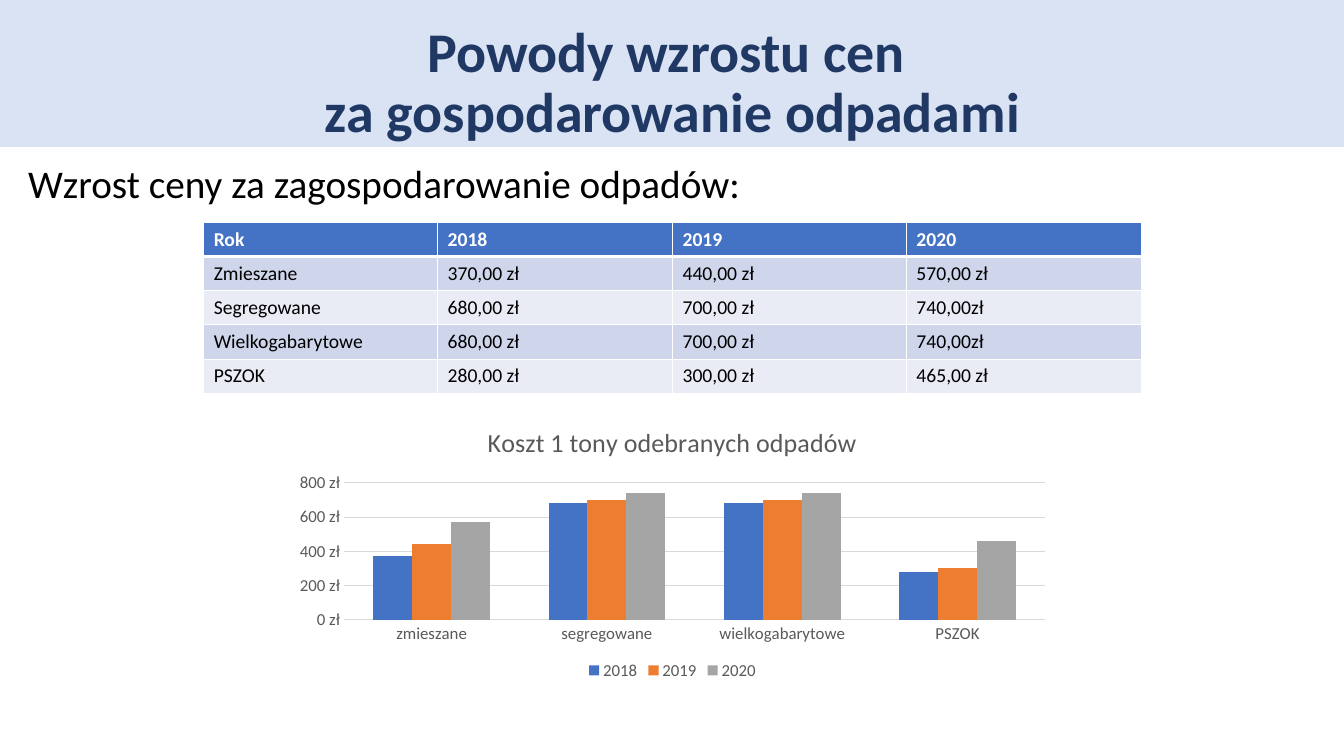
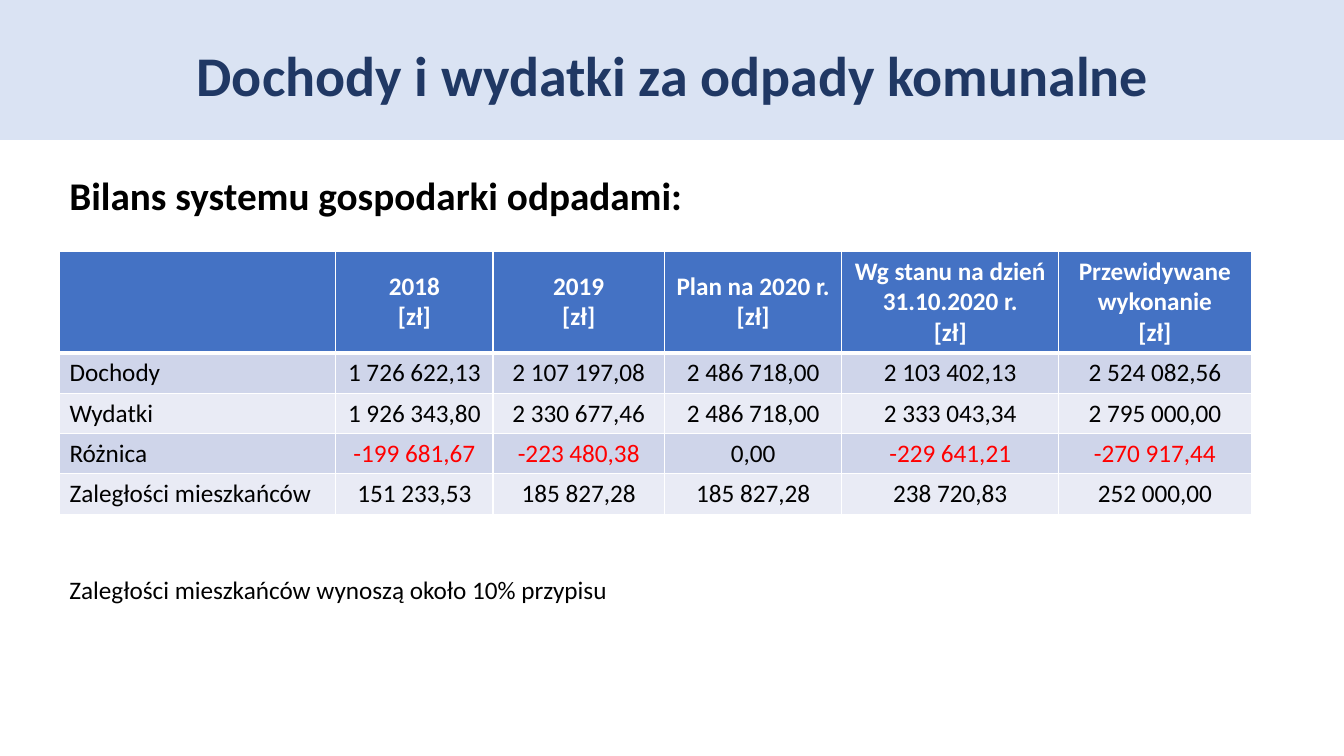
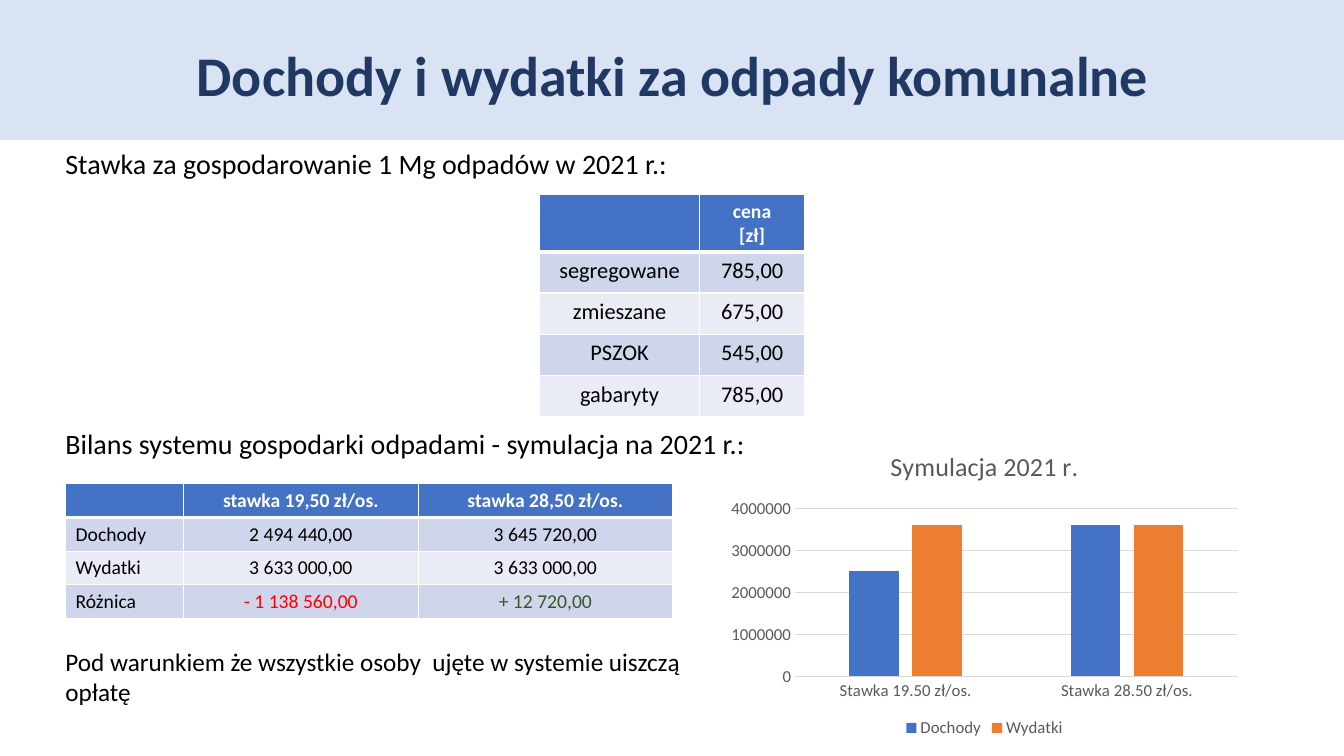
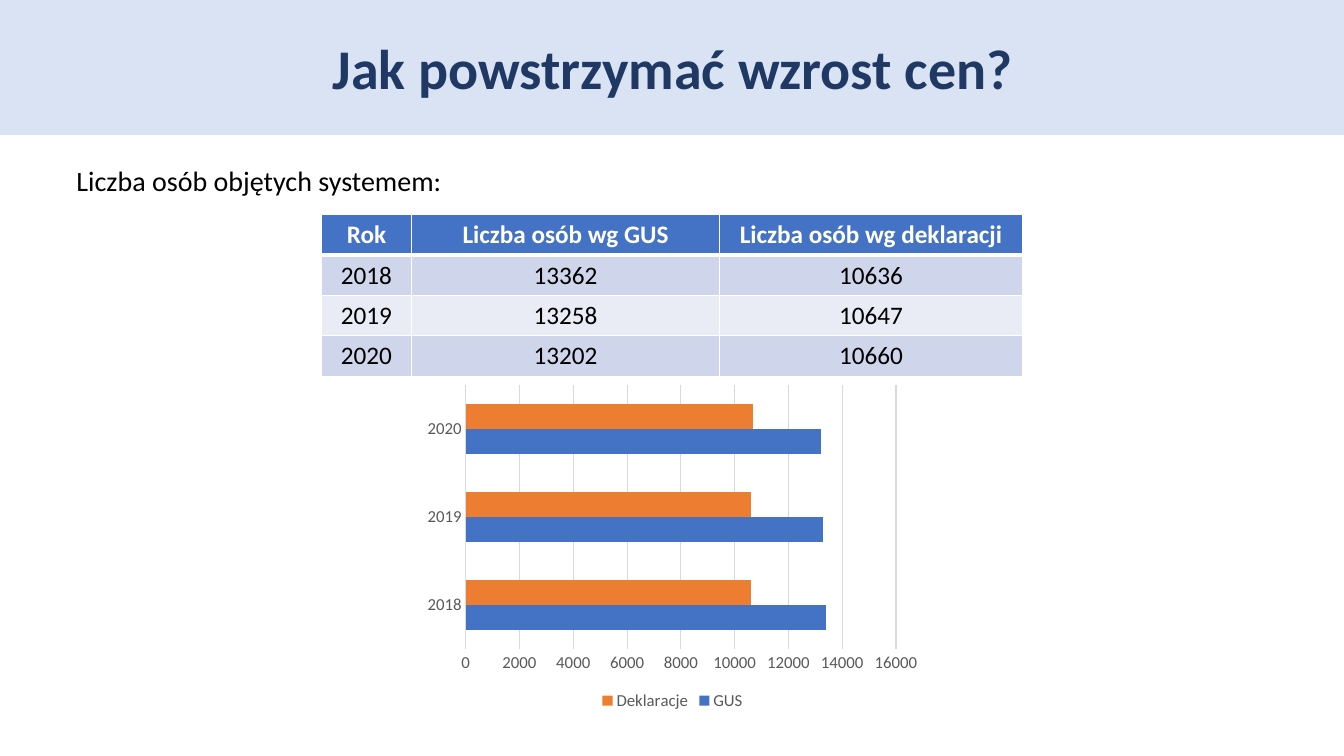
"""Build four slides on the cost of municipal waste."""
from lxml.etree import SubElement as Sub
from pptx import Presentation
from pptx.chart.data import CategoryChartData as Data
from pptx.dml.color import RGBColor
from pptx.enum.chart import XL_CHART_TYPE as Kind, XL_LEGEND_POSITION as Spot, XL_TICK_MARK as Tick
from pptx.enum.shapes import MSO_SHAPE as Form
from pptx.enum.text import MSO_ANCHOR as Anchor, MSO_AUTO_SIZE as Fit, PP_ALIGN as Align
from pptx.oxml.ns import qn
from pptx.util import Pt

PX = 9144
WIDE, HIGH = 1333, 750
FONT = "Calibri"
WHITE = RGBColor(0xFF, 0xFF, 0xFF)
BLACK = RGBColor(0, 0, 0)
PALE = RGBColor(0xDA, 0xE3, 0xF3)
NAVY = RGBColor(0x20, 0x38, 0x64)
BLUE = RGBColor(0x44, 0x72, 0xC4)
ORANGE = RGBColor(0xED, 0x7D, 0x31)
GREY = RGBColor(0xA5, 0xA5, 0xA5)
INK = RGBColor(0x59, 0x59, 0x59)
RULE = RGBColor(0xD9, 0xD9, 0xD9)
RED = RGBColor(0xFF, 0, 0)
GREEN = RGBColor(0x38, 0x57, 0x23)
BANDS = RGBColor(0xCF, 0xD5, 0xEA), RGBColor(0xE9, 0xEB, 0xF5)
SIGNS = {"-": RED, "+": GREEN}
HUES = BLUE, ORANGE, GREY


def emu(*sides):
    return [side * PX for side in sides]


def style(font, size, color, bold=False):
    font.name, font.size, font.bold = FONT, Pt(size), bold
    font.color.rgb = color


def write(para, text, size, color, bold=False):
    run = para.add_run()
    run.text = text
    style(run.font, size, color, bold)


def place(shape, *box):
    shape.left, shape.top, shape.width, shape.height = emu(*box)


def head(deck, lines, band, *box):
    slide = deck.slides.add_slide(deck.slide_layouts[5])
    strip = slide.shapes.add_shape(Form.RECTANGLE, *emu(0, 0, WIDE, band))
    strip.shadow.inherit = False
    strip.fill.solid()
    strip.fill.fore_color.rgb = strip.line.color.rgb = PALE
    strip.line.width = Pt(1)
    title = slide.shapes.title
    strip._element.addnext(title._element)
    place(title, *box)
    frame = title.text_frame
    frame.word_wrap, frame.auto_size = True, Fit.NONE
    frame.vertical_anchor = Anchor.MIDDLE
    para = frame.paragraphs[0]
    para.alignment, para.line_spacing = Align.CENTER, 0.9
    for num, line in enumerate(lines):
        if num:
            para.add_line_break()
        write(para, line, 40, NAVY, True)
    return slide


def note(slide, text, size, *box, bold=False):
    frame = slide.shapes.add_textbox(*emu(*box)).text_frame
    frame.word_wrap = True
    write(frame.paragraphs[0], text, size, BLACK, bold)


def edge(cell, side, width):
    line = Sub(cell._tc.get_or_add_tcPr(), qn("a:ln" + side), w=str(Pt(width)))
    Sub(Sub(line, qn("a:solidFill")), qn("a:srgbClr"), val=str(WHITE))


def fill(cell, text, row, size, align):
    top = row == 0
    for side in "LRTB":
        thick = side == "B" and top or side == "T" and row == 1
        edge(cell, side, 3 if thick else 1)
    cell.fill.solid()
    cell.fill.fore_color.rgb = BLUE if top else BANDS[(row - 1) % 2]
    cell.vertical_anchor = Anchor.MIDDLE if top else Anchor.TOP
    color = WHITE if top else SIGNS.get(text[:1], BLACK)
    frame = cell.text_frame
    for num, line in enumerate(text.split("\n")):
        para = frame.add_paragraph() if num else frame.paragraphs[0]
        para.alignment = align
        if line:
            write(para, line, size, color, top)
        else:
            Sub(para._p, qn("a:endParaRPr"), sz=str(size * 100))


def grid(slide, rows, left, top, cols, tall, size, first=None, body=None, lead=0):
    highs = [first or tall] + [tall] * (len(rows) - 1)
    box = emu(left, top, sum(cols), sum(highs))
    table = slide.shapes.add_table(len(rows), len(cols), *box).table
    for col, width in zip(table.columns, emu(*cols)):
        col.width = width
    for num, (row, high) in enumerate(zip(rows, emu(*highs))):
        table.rows[num].height = high
        for pos, text in enumerate(row):
            align = Align.LEFT if pos < lead else Align.CENTER
            fill(table.cell(num, pos), text, num, body if num and body else size, align)


def plot(slide, kind, names, series, *box, title=None, gap=150, lap=0,
         code="General", step=None, base=False):
    data = Data()
    data.categories = names
    for name, vals in series:
        data.add_series(name, vals)
    chart = slide.shapes.add_chart(kind, *emu(*box), data).chart
    style(chart.font, 12, INK)
    chart.has_title = bool(title)
    if title:
        write(chart.chart_title.text_frame.paragraphs[0], title, 18.6, INK)
    chart.has_legend = True
    chart.legend.position = Spot.BOTTOM
    chart.legend.include_in_layout = False
    style(chart.legend.font, 12, INK)
    cat, val = chart.category_axis, chart.value_axis
    for axis in cat, val:
        axis.major_tick_mark = axis.minor_tick_mark = Tick.NONE
        axis.format.line.fill.background()
        style(axis.tick_labels.font, 12, INK)
    val.has_major_gridlines = True
    lines = [val.major_gridlines.format.line] + [cat.format.line] * base
    for line in lines:
        line.color.rgb, line.width = RULE, Pt(0.75)
    val.tick_labels.number_format = code
    val.tick_labels.number_format_is_linked = False
    if step:
        val.major_unit = step
    bars = chart.plots[0]
    bars.gap_width, bars.overlap, bars.vary_by_categories = gap, lap, False
    for item, hue in zip(bars.series, HUES):
        item.invert_if_negative = False
        item.format.fill.solid()
        item.format.fill.fore_color.rgb = hue


def costs(deck):
    slide = head(deck, ["Powody wzrostu cen ", "za gospodarowanie odpadami"],
                 145, 92, 11, 1150, 145)
    note(slide, "Wzrost ceny za zagospodarowanie odpadów:", 28, 18, 153, 1150, 63)
    grid(slide, [
        ["Rok", "2018", "2019", "2020"],
        ["Zmieszane", "370,00 zł", "440,00 zł", "570,00 zł"],
        ["Segregowane", "680,00 zł", "700,00 zł", "740,00zł"],
        ["Wielkogabarytowe", "680,00 zł", "700,00 zł", "740,00zł"],
        ["PSZOK", "280,00 zł", "300,00 zł", "465,00 zł"],
    ], 202, 221, [232, 233, 232, 233], 34, 14, first=33, lead=4)
    plot(slide, Kind.COLUMN_CLUSTERED,
         ["zmieszane", "segregowane", "wielkogabarytowe", "PSZOK"],
         [("2018", [370, 680, 680, 280]), ("2019", [440, 700, 700, 300]),
          ("2020", [570, 740, 740, 460])],
         282, 405, 770, 274, title="Koszt 1 tony odebranych odpadów",
         code=r'#,##0\ "zł"')


def funds(deck):
    return head(deck, ["Dochody i wydatki za odpady komunalne"], 138, 92, 19, 1150, 118)


def budget(deck):
    slide = funds(deck)
    note(slide, "Bilans systemu gospodarki odpadami:", 28, 59, 165, 1182, 57, bold=True)
    grid(slide, [
        ["", "2018\n[zł]", "2019\n[zł]", "Plan na 2020 r.\n[zł]",
         "Wg stanu na dzień 31.10.2020 r.\n[zł]", "Przewidywane wykonanie\n[zł]"],
        ["Dochody", "1 726 622,13", "2 107 197,08", "2 486 718,00", "2 103 402,13", "2 524 082,56"],
        ["Wydatki", "1 926 343,80", "2 330 677,46", "2 486 718,00", "2 333 043,34", "2 795 000,00"],
        ["Różnica", "-199 681,67", "-223 480,38", "0,00", "-229 641,21", "-270 917,44"],
        ["Zaległości mieszkańców", "151 233,53", "185 827,28", "185 827,28", "238 720,83", "252 000,00"],
    ], 59, 249, [274, 156, 170, 176, 215, 191], 40, 18, first=101, lead=1)
    note(slide, "Zaległości mieszkańców wynoszą około 10% przypisu", 18, 59, 565, 604, 40)


def rates(deck):
    slide = funds(deck)
    note(slide, "Stawka za gospodarowanie 1 Mg odpadów w 2021 r.:", 20, 55, 140, 1182, 44)
    grid(slide, [
        ["", "cena\n[zł]"],
        ["segregowane", "785,00"],
        ["zmieszane", "675,00"],
        ["PSZOK", "545,00"],
        ["gabaryty", "785,00"],
    ], 535, 193, [159, 104], 41, 14, first=56, body=16)
    note(slide, "Bilans systemu gospodarki odpadami - symulacja na 2021 r.:", 20, 55, 418, 1182, 44)
    grid(slide, [
        ["", "stawka 19,50 zł/os.", "stawka 28,50 zł/os."],
        ["Dochody", "2 494 440,00", "3 645 720,00"],
        ["Wydatki", "3 633 000,00", "3 633 000,00"],
        ["Różnica", "- 1 138 560,00", "+ 12 720,00"],
    ], 65, 480, [117, 233, 252], 33, 14, lead=1)
    plot(slide, Kind.COLUMN_CLUSTERED, ["Stawka 19.50 zł/os.", "Stawka 28.50 zł/os."],
         [("Dochody", [2500000, 3600000]), ("Wydatki", [3600000, 3600000])],
         715, 429, 523, 307, title="Symulacja 2021 r.", gap=219, lap=-27,
         step=1000000, base=True)
    note(slide, "Pod warunkiem że wszystkie osoby  ujęte w systemie uiszczą opłatę",
         18, 55, 636, 696, 71)


def people(deck):
    slide = head(deck, ["Jak powstrzymać wzrost cen?"], 133, 92, 25, 1150, 92)
    note(slide, "Liczba osób objętych systemem:", 20, 66, 157, 843, 44)
    grid(slide, [
        ["Rok", "Liczba osób wg GUS", "Liczba osób wg deklaracji"],
        ["2018", "13362", "10636"],
        ["2019", "13258", "10647"],
        ["2020", "13202", "10660"],
    ], 319, 213, [89, 306, 300], 40, 18)
    plot(slide, Kind.BAR_CLUSTERED, ["2018", "2019", "2020"],
         [("GUS", [13400, 13300, 13200]), ("Deklaracje", [10600, 10600, 10700])],
         414, 375, 506, 334)


def main():
    deck = Presentation()
    deck.slide_width, deck.slide_height = emu(WIDE, HIGH)
    for build in costs, budget, rates, people:
        build(deck)
    deck.save("out.pptx")


if __name__ == "__main__":
    main()
